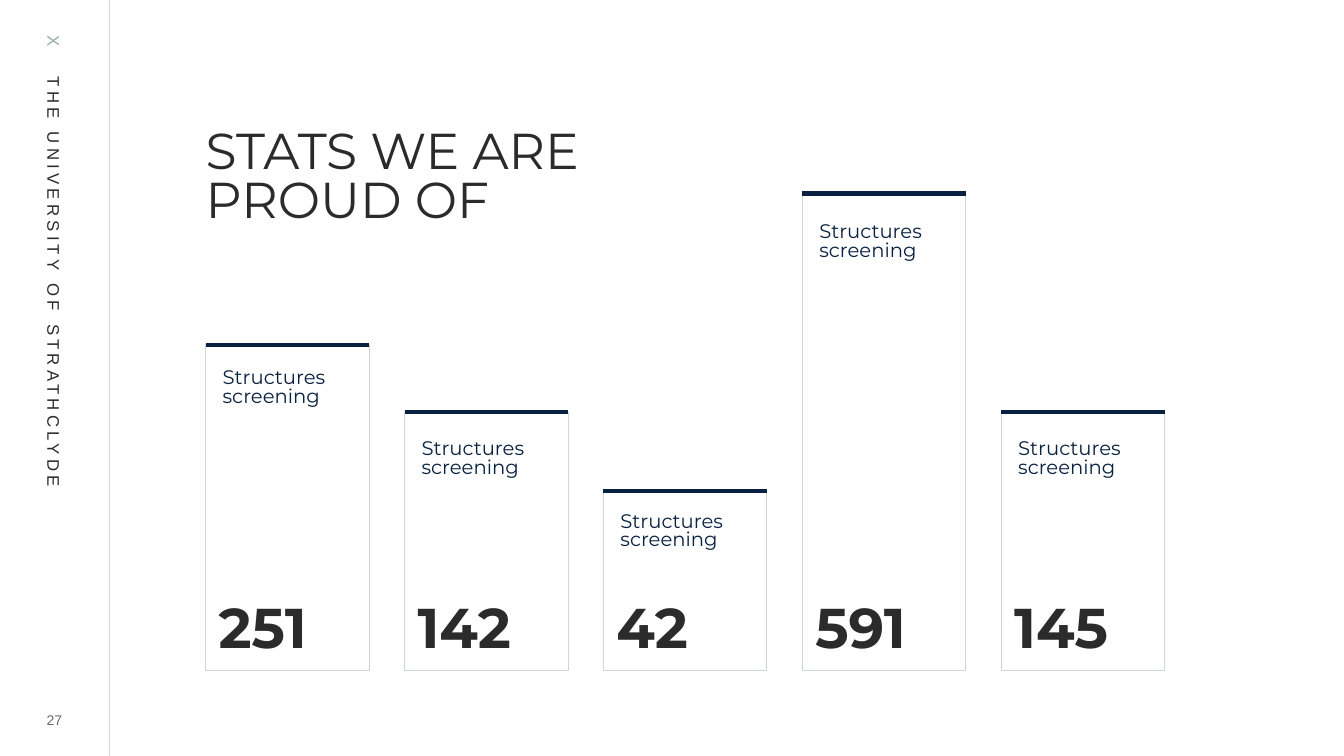
import pptx
import pptx.util
import pptx.dml.color
import pptx.enum.shapes
import pptx.enum.text
from dataclasses import dataclass
from lxml import etree

Inches = pptx.util.Inches
Pt = pptx.util.Pt
Rgb = pptx.dml.color.RGBColor.from_string
Align = pptx.enum.text.PP_ALIGN
Anchor = pptx.enum.text.MSO_ANCHOR


@dataclass(frozen=True)
class Theme:
    ink: str = "2B2B2B"
    navy: str = "092140"
    edge: str = "CCD8D8"
    sage: str = "95ACAC"
    rule: str = "D5D5D5"
    gray: str = "6B6B6B"
    head: str = "Montserrat"
    body: str = "Arial"
    title: int = 36
    stat: int = 40
    label: int = 14
    side: int = 12
    page: int = 10


theme = Theme()


def style(frame, face, size, color, bold=False, space=None):
    frame.word_wrap = True
    frame.auto_size = pptx.enum.text.MSO_AUTO_SIZE.NONE
    for para in frame.paragraphs:
        para.line_spacing = space
        for run in para.runs:
            run.font.name = face
            run.font.size = Pt(size)
            run.font.bold = bold
            run.font.color.rgb = Rgb(color)


def draw_line(x1, y1, x2, y2, color, width):
    line = slide.shapes.add_connector(
        pptx.enum.shapes.MSO_CONNECTOR.STRAIGHT,
        Inches(x1), Inches(y1), Inches(x2), Inches(y2))
    line.line.color.rgb = Rgb(color)
    line.line.width = Pt(width)
    etree.SubElement(line._element.spPr, pptx.oxml.ns.qn("a:effectLst"))


deck = pptx.Presentation()
deck.slide_width = Inches(13.33)
deck.slide_height = Inches(7.5)
slide = deck.slides.add_slide(deck.slide_layouts[5])
shapes = slide.shapes

draw_line(1.08, 0, 1.08, 7.5, theme.rule, 0.5)

side = shapes.add_textbox(Inches(-2.3), Inches(2.94), Inches(5.67), Inches(0.3))
side.rotation = 90
para = side.text_frame.paragraphs[0]
tabs = etree.SubElement(para._p.get_or_add_pPr(), pptx.oxml.ns.qn("a:tabLst"))
etree.SubElement(tabs, pptx.oxml.ns.qn("a:tab"), pos=str(Inches(0.41)), algn="l")
for words in ("X", "\tTHE UNIVERSITY OF STRATHCLYDE"):
    para.add_run().text = words
style(side.text_frame, theme.body, theme.side, theme.ink)
para.runs[0].font.color.rgb = Rgb(theme.sage)
for run in para.runs:
    run.font._element.set("spc", "300")

page = shapes.add_textbox(Inches(0.26), Inches(7.02), Inches(0.56), Inches(0.25))
frame = page.text_frame
frame.text = "27"
frame.margin_left = frame.margin_right = frame.margin_top = frame.margin_bottom = 0
frame.vertical_anchor = Anchor.MIDDLE
frame.paragraphs[0].alignment = Align.CENTER
style(frame, theme.body, theme.page, theme.gray)

title = shapes.title
title.left, title.top = Inches(2.04), Inches(1.09)
title.width, title.height = Inches(4.62), Inches(1.77)
frame = title.text_frame
frame.text = "STATS WE ARE\vPROUD OF"
frame.margin_left = frame.margin_right = frame.margin_bottom = 0
frame.margin_top = Inches(0.21)
frame.vertical_anchor = Anchor.TOP
frame.paragraphs[0].alignment = Align.LEFT
style(frame, theme.head, theme.title, theme.ink, space=0.8)

stats = [
    ("251", 3.42, 3.62),
    ("142", 4.09, 4.32),
    ("42", 4.87, 5.04),
    ("591", 1.92, 2.17),
    ("145", 4.09, 4.32),
]
first, last, wide, base = 2.04, 9.93, 1.62, 6.65
step = (last - first) / (len(stats) - 1)

for i, (count, top, drop) in enumerate(stats):
    left = first + i * step
    bar = shapes.add_shape(
        pptx.enum.shapes.MSO_SHAPE.RECTANGLE,
        Inches(left), Inches(top), Inches(wide), Inches(base - top))
    bar.shadow.inherit = False
    bar.fill.background()
    bar.line.color.rgb = Rgb(theme.edge)
    bar.line.width = Pt(0.5)
    draw_line(left, top, left + wide, top, theme.navy, 3)

    label = shapes.add_textbox(
        Inches(left + 0.07), Inches(drop), Inches(1.55), Inches(0.93))
    label.text_frame.text = "Structures\nscreening"
    style(label.text_frame, theme.head, theme.label, theme.navy, space=0.8)

    stat = shapes.add_textbox(
        Inches(left + 0.03), Inches(5.96), Inches(1.59), Inches(0.56))
    stat.text_frame.text = count
    style(stat.text_frame, theme.head, theme.stat, theme.ink, True, 0.8)

deck.save("out.pptx")
